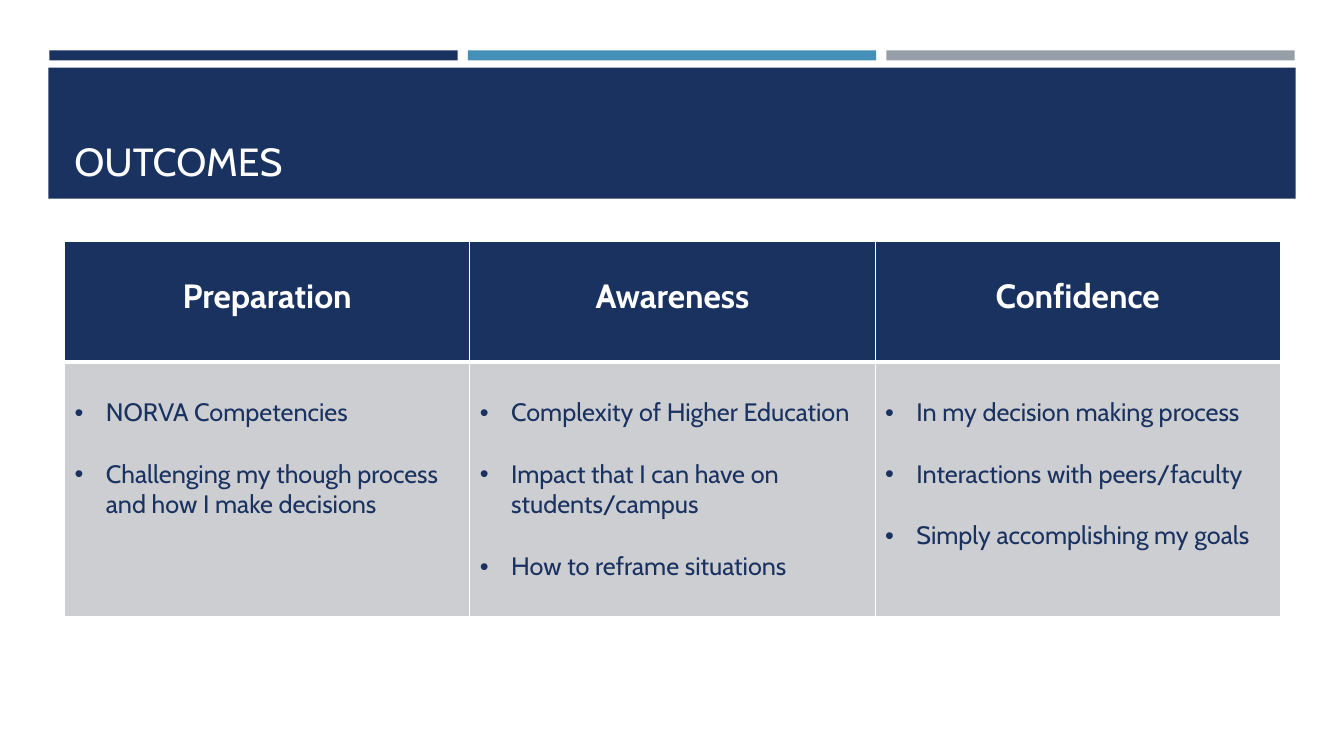
from dataclasses import dataclass

from lxml import etree
from pptx import Presentation
from pptx.dml.color import RGBColor
from pptx.enum.shapes import MSO_SHAPE
from pptx.enum.text import MSO_ANCHOR, PP_ALIGN
from pptx.oxml.ns import qn
from pptx.slide import Slide
from pptx.table import _Cell
from pptx.text.text import _Paragraph
from pptx.util import Emu, Pt

RECTANGLE = MSO_SHAPE.RECTANGLE
BOTTOM = MSO_ANCHOR.BOTTOM
CENTER = PP_ALIGN.CENTER
LEFT = PP_ALIGN.LEFT
EMU_PER_PX = 9144


@dataclass(frozen=True)
class Theme:
    font: str = "Cabin"
    navy: str = "1A3260"
    blue: str = "4590B8"
    gray: str = "969FA7"
    pale: str = "CDCED2"
    white: str = "FFFFFF"
    title_size: int = 28
    heading_size: int = 24
    body_size: int = 18
    bullet_gap: int = 22
    thin_rule: int = 1
    heading_rule: int = 3


@dataclass(frozen=True)
class Band:
    left: int
    top: int
    width: int
    height: int
    color: str


@dataclass(frozen=True)
class Outcome:
    heading: str
    points: tuple[str, ...]


THEME = Theme()
STRIPE_LEFT, STRIPE_STEP, STRIPE_WIDTH = 49, 415, 405
STRIPES = [
    Band(STRIPE_LEFT + index * STRIPE_STEP, 50, STRIPE_WIDTH, 10, color)
    for index, color in enumerate((THEME.navy, THEME.blue, THEME.gray))
]
TITLE_BAND = Band(48, 67, 1237, 130, THEME.navy)
COLUMN_WIDTH = 402
ROW_HEIGHTS = (120, 253)
CELL_TOP_MARGIN = 35
BULLET_INDENT = 31
OUTCOMES = (
    Outcome("Preparation", (
        "NORVA Competencies",
        "Challenging my though process and how I make decisions",
    )),
    Outcome("Awareness", (
        "Complexity of Higher Education",
        "Impact that I can have on students/campus",
        "How to reframe situations",
    )),
    Outcome("Confidence", (
        "In my decision making process",
        "Interactions with peers/faculty",
        "Simply accomplishing my goals",
    )),
)


def px(length: int) -> Emu:
    return Emu(length * EMU_PER_PX)


def add_run(paragraph: _Paragraph, text: str, size: int, color: str, bold: bool = False) -> None:
    run = paragraph.add_run()
    run.text = text
    run.font.name = THEME.font
    run.font.size = Pt(size)
    run.font.bold = bold
    run.font.color.rgb = RGBColor.from_string(color)


def draw_band(slide: Slide, band: Band) -> None:
    bar = slide.shapes.add_shape(
        RECTANGLE, px(band.left), px(band.top), px(band.width), px(band.height)
    )
    bar.shadow.inherit = False
    bar.fill.solid()
    bar.fill.fore_color.rgb = RGBColor.from_string(band.color)
    bar.line.fill.background()


def draw_title(slide: Slide, text: str) -> None:
    title = slide.shapes.add_textbox(px(64), px(77), px(1206), px(111)).text_frame
    title.word_wrap = True
    title.vertical_anchor = BOTTOM
    add_run(title.paragraphs[0], text, THEME.title_size, THEME.white)


def style_cell(cell: _Cell, fill: str, top_rule: int, bottom_rule: int) -> None:
    cell.margin_top = px(CELL_TOP_MARGIN)
    cell.fill.solid()
    cell.fill.fore_color.rgb = RGBColor.from_string(fill)
    properties = cell._tc.get_or_add_tcPr()
    rules = {"lnL": THEME.thin_rule, "lnR": THEME.thin_rule, "lnT": top_rule, "lnB": bottom_rule}
    for position, (side, width) in enumerate(rules.items()):
        border = etree.Element(qn(f"a:{side}"), w=str(Pt(width)))
        paint = etree.SubElement(border, qn("a:solidFill"))
        etree.SubElement(paint, qn("a:srgbClr"), val=THEME.white)
        properties.insert(position, border)


def add_bullet(paragraph: _Paragraph) -> None:
    properties = paragraph._p.get_or_add_pPr()
    properties.set("marL", str(px(BULLET_INDENT)))
    properties.set("indent", str(px(-BULLET_INDENT)))
    etree.SubElement(properties, qn("a:buFont"), typeface="Arial")
    etree.SubElement(properties, qn("a:buChar"), char="•")


def fill_heading(cell: _Cell, heading: str) -> None:
    style_cell(cell, THEME.navy, THEME.thin_rule, THEME.heading_rule)
    paragraph = cell.text_frame.paragraphs[0]
    paragraph.alignment = CENTER
    add_run(paragraph, heading, THEME.heading_size, THEME.white, bold=True)


def fill_points(cell: _Cell, points: tuple[str, ...]) -> None:
    style_cell(cell, THEME.pale, THEME.heading_rule, THEME.thin_rule)
    frame = cell.text_frame
    for index, point in enumerate(points):
        paragraph = frame.add_paragraph() if index else frame.paragraphs[0]
        paragraph.alignment = LEFT
        if index:
            paragraph.space_before = Pt(THEME.bullet_gap)
        add_bullet(paragraph)
        add_run(paragraph, point, THEME.body_size, THEME.navy)


def draw_outcomes(slide: Slide, outcomes: tuple[Outcome, ...]) -> None:
    table = slide.shapes.add_table(
        len(ROW_HEIGHTS), len(outcomes), px(64), px(239),
        px(COLUMN_WIDTH * len(outcomes)), px(sum(ROW_HEIGHTS)),
    ).table
    table.horz_banding = False
    for row, height in zip(table.rows, ROW_HEIGHTS):
        row.height = px(height)
    for index, outcome in enumerate(outcomes):
        table.columns[index].width = px(COLUMN_WIDTH)
        fill_heading(table.cell(0, index), outcome.heading)
        fill_points(table.cell(1, index), outcome.points)


def main() -> None:
    presentation = Presentation()
    presentation.slide_width = px(1333)
    presentation.slide_height = px(750)
    slide = presentation.slides.add_slide(presentation.slide_layouts[6])
    for band in (*STRIPES, TITLE_BAND):
        draw_band(slide, band)
    draw_title(slide, "OUTCOMES")
    draw_outcomes(slide, OUTCOMES)
    presentation.save("out.pptx")


if __name__ == "__main__":
    main()
